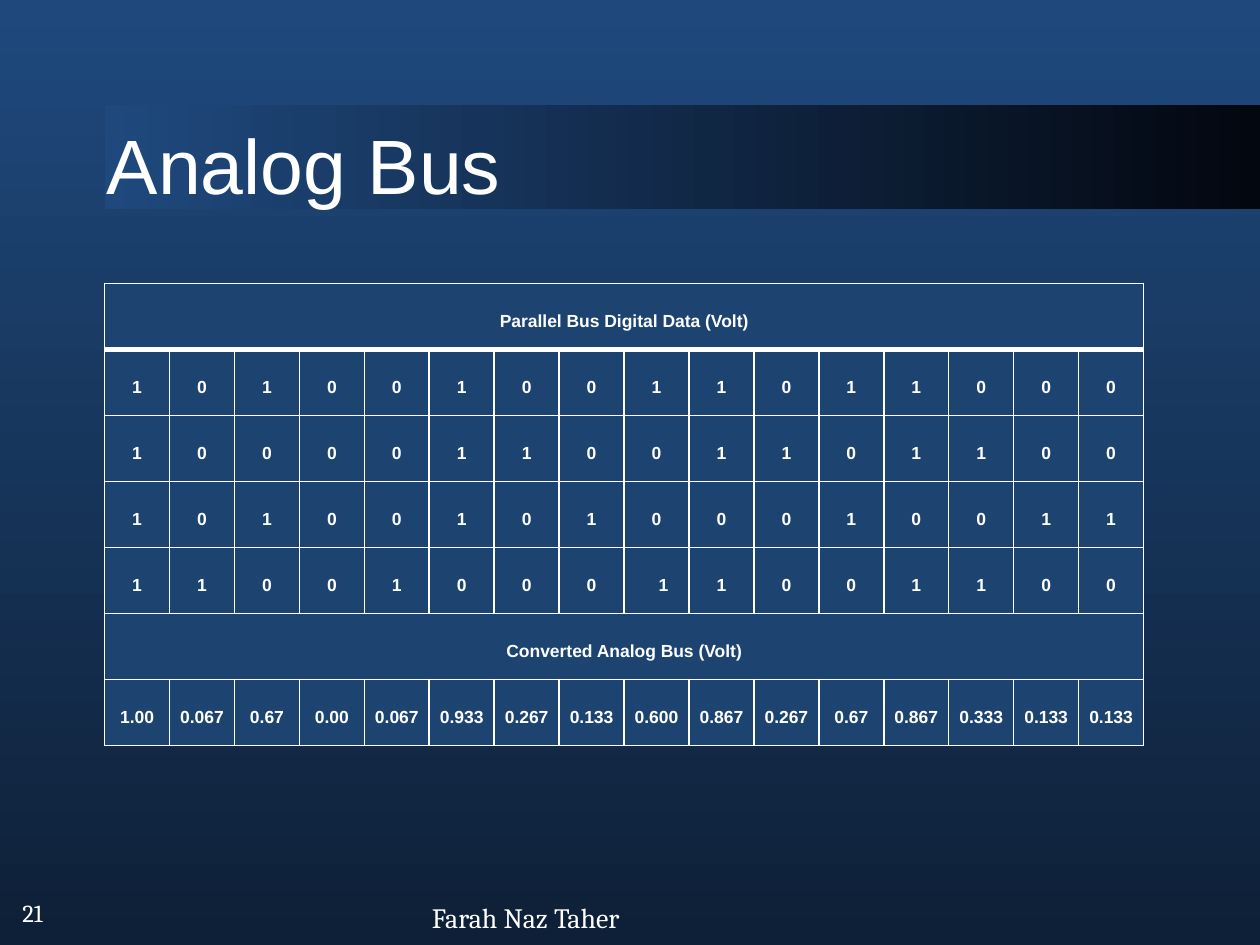
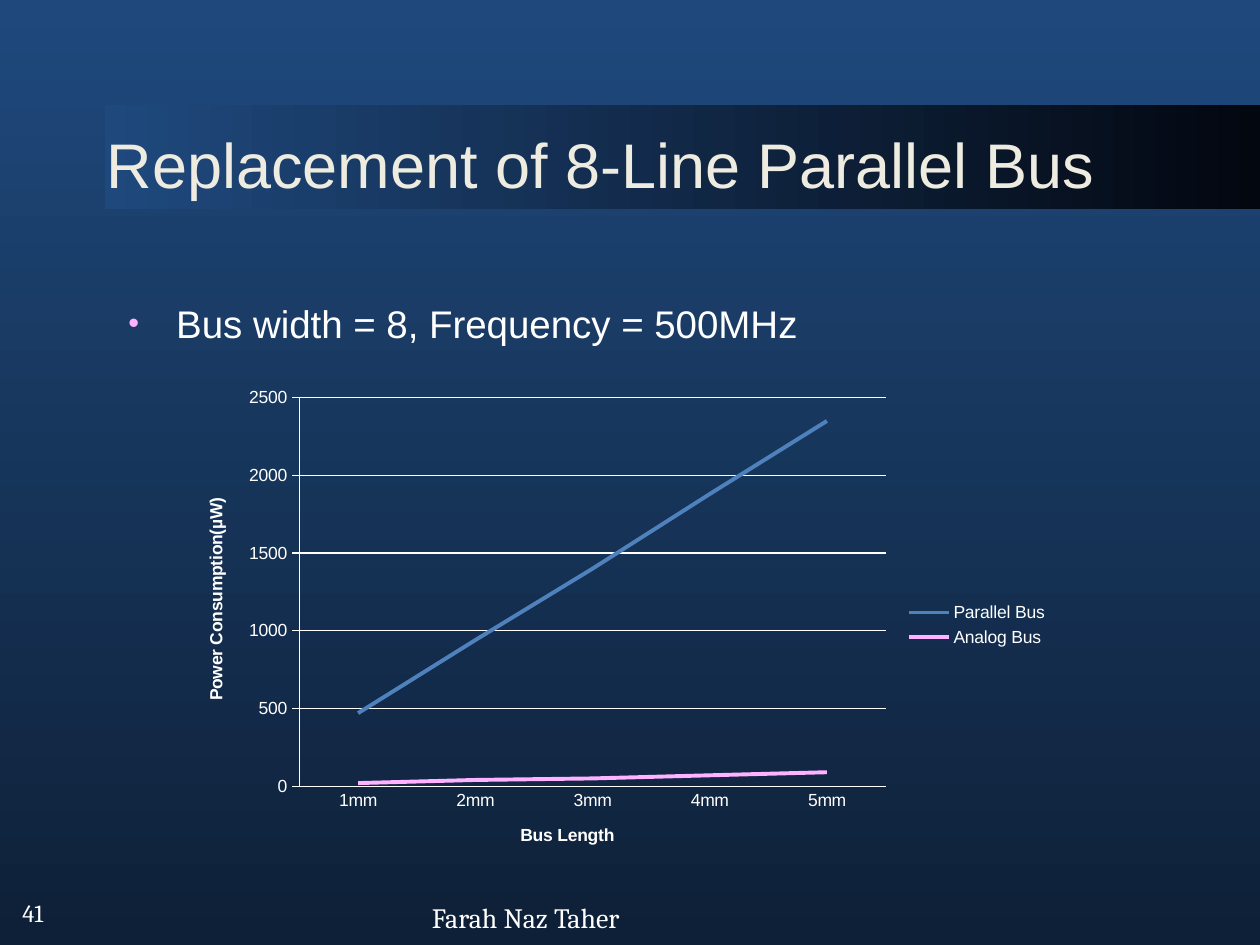
from dataclasses import dataclass

import lxml.etree
import pptx
import pptx.chart.data
import pptx.dml.color
import pptx.enum.chart
import pptx.enum.shapes
import pptx.enum.text
import pptx.oxml.ns
import pptx.util
from pptx.util import Inches

qn = pptx.oxml.ns.qn


@dataclass(frozen=True)
class Theme:
    sky: str = "1F497D"
    dusk: str = "0E2037"
    night: str = "030710"
    cell: str = "1D4371"
    white: str = "FFFFFF"
    ivory: str = "EEECE1"
    blue: str = "4F81BD"
    pink: str = "FEB2FF"
    sans: str = "Arial"
    serif: str = "Cambria"
    title_size: int = 44
    long_title_size: int = 36
    body_size: int = 22
    author_size: int = 16
    number_size: int = 14
    small_size: int = 10


def rgb(color):
    return pptx.dml.color.RGBColor.from_string(color)


def set_font(font, size, color, name, bold=False):
    font.size = pptx.util.Pt(size)
    font.color.rgb = rgb(color)
    font.name = name
    font.bold = bold


def set_gradient(fill, start, end, angle):
    fill.gradient()
    fill.gradient_angle = angle
    for stop, color in zip(fill.gradient_stops, (start, end)):
        stop.color.rgb = rgb(color)


def set_borders(cell, color, **widths):
    """Draw cell edges; widths maps L, R, T and B to points."""
    properties = cell._tc.get_or_add_tcPr()
    for side, width in widths.items():
        line = lxml.etree.SubElement(
            properties, qn(f"a:ln{side}"), w=str(pptx.util.Pt(width)))
        fill = lxml.etree.SubElement(line, qn("a:solidFill"))
        lxml.etree.SubElement(fill, qn("a:srgbClr"), val=color)


class SlideBuilder:
    AUTHOR = "Farah Naz Taher"

    def __init__(self, deck, theme):
        self.deck = deck
        self.theme = theme
        self.page = None

    def start_slide(self, title, number, title_size, title_color):
        """Add a slide with the shared background, band, title and footer."""
        theme = self.theme
        self.page = self.deck.slides.add_slide(self.deck.slide_layouts[6])
        set_gradient(self.page.background.fill, theme.sky, theme.dusk, 270)
        self.band()
        self.text(title, (0.75, 0.67, 8.5, 1.25), title_size, title_color,
                  theme.sans, pptx.enum.text.MSO_ANCHOR.MIDDLE)
        self.text(str(number), (0.08, 7.08, 0.5, 0.34), theme.number_size,
                  theme.white, theme.serif)
        self.text(self.AUTHOR, (3.33, 7.1, 1.83, 0.37), theme.author_size,
                  theme.white, theme.serif)

    def band(self):
        band = self.page.shapes.add_shape(
            pptx.enum.shapes.MSO_SHAPE.RECTANGLE,
            Inches(0.83), Inches(0.83), Inches(9.17), Inches(0.83))
        band.shadow.inherit = False
        band.line.fill.background()
        set_gradient(band.fill, self.theme.sky, self.theme.night, 0)

    def text(self, words, place, size, color, font_name,
             anchor=pptx.enum.text.MSO_ANCHOR.TOP, bullet_color=None):
        box = self.page.shapes.add_textbox(*map(Inches, place))
        frame = box.text_frame
        frame.word_wrap = True
        frame.vertical_anchor = anchor
        para = frame.paragraphs[0]
        para.text = words
        if bullet_color:
            self.bullet(para, bullet_color)
        set_font(para.font, size, color, font_name)

    def bullet(self, para, color):
        properties = para._p.get_or_add_pPr()
        indent = Inches(0.38)
        properties.set("marL", str(indent))
        properties.set("indent", str(-indent))
        bullet_color = lxml.etree.SubElement(properties, qn("a:buClr"))
        lxml.etree.SubElement(bullet_color, qn("a:srgbClr"), val=color)
        lxml.etree.SubElement(properties, qn("a:buSzPct"), val="80000")
        lxml.etree.SubElement(properties, qn("a:buFont"), typeface=self.theme.sans)
        lxml.etree.SubElement(properties, qn("a:buChar"), char="•")

    def table(self, rows, place):
        """Add a grid in which a row of one entry spans the full width."""
        column_count = max(map(len, rows))
        table = self.page.shapes.add_table(
            len(rows), column_count, *map(Inches, place)).table
        table.first_row = table.horz_banding = False
        for row_index, row in enumerate(rows):
            if len(row) == 1:
                table.cell(row_index, 0).merge(
                    table.cell(row_index, column_count - 1))
            for column_index in range(column_count):
                cell = table.cell(row_index, column_index)
                set_borders(cell, self.theme.white, L=1, R=1,
                            T=3 if row_index == 1 else 1,
                            B=3 if row_index == 0 else 1)
                cell.fill.solid()
                cell.fill.fore_color.rgb = rgb(self.theme.cell)
                if column_index < len(row):
                    self.cell_text(cell, row[column_index])
        return table

    def cell_text(self, cell, words):
        cell.margin_left = cell.margin_right = Inches(0.07)
        cell.margin_top = cell.margin_bottom = 0
        cell.vertical_anchor = pptx.enum.text.MSO_ANCHOR.MIDDLE
        para = cell.text_frame.paragraphs[0]
        para.text = words
        para.alignment = pptx.enum.text.PP_ALIGN.CENTER
        para.line_spacing = 1.5
        set_font(para.font, self.theme.small_size, self.theme.white,
                 self.theme.sans, bold=True)

    def line_chart(self, categories, series, axis_titles, place):
        """Add a line chart; series maps each name to its values and color."""
        theme = self.theme
        data = pptx.chart.data.CategoryChartData()
        data.categories = categories
        for name, (values, _) in series.items():
            data.add_series(name, values)
        chart = self.page.shapes.add_chart(
            pptx.enum.chart.XL_CHART_TYPE.LINE, *map(Inches, place), data).chart
        set_font(chart.font, theme.small_size, theme.white, theme.sans)
        chart.has_title = False
        chart.has_legend = True
        chart.legend.position = pptx.enum.chart.XL_LEGEND_POSITION.RIGHT
        chart.legend.include_in_layout = False

        plot = chart.plots[0]
        plot.vary_by_categories = False
        for line, (_, color) in zip(plot.series, series.values()):
            line.smooth = False
            line.marker.style = pptx.enum.chart.XL_MARKER_STYLE.NONE
            line.format.line.width = pptx.util.Pt(2.25)
            line.format.line.color.rgb = rgb(color)

        marks = pptx.enum.chart.XL_TICK_MARK
        axes = (chart.category_axis, chart.value_axis)
        for axis, title, mark in zip(axes, axis_titles, (marks.NONE, marks.OUTSIDE)):
            axis.major_tick_mark = mark
            axis.minor_tick_mark = marks.NONE
            axis.format.line.color.rgb = rgb(theme.white)
            para = axis.axis_title.text_frame.paragraphs[0]
            para.text = title
            set_font(para.font, theme.small_size, theme.white, theme.sans, bold=True)
        chart.value_axis.maximum_scale = 2500
        chart.value_axis.minimum_scale = 0
        chart.value_axis.major_unit = 500
        chart.value_axis.has_major_gridlines = True
        chart.value_axis.major_gridlines.format.line.color.rgb = rgb(theme.white)


def add_bus_table_slide(builder):
    theme = builder.theme
    builder.start_slide("Analog Bus", 21, theme.title_size, theme.white)
    digital_lines = ("1010010011011000", "1000011001101100",
                     "1010010100010011", "1100100011001100")
    analog_volts = ("1.00 0.067 0.67 0.00 0.067 0.933 0.267 0.133 "
                    "0.600 0.867 0.267 0.67 0.867 0.333 0.133 0.133")
    rows = [["Parallel Bus Digital Data (Volt)"],
            *map(list, digital_lines),
            ["Converted Analog Bus (Volt)"],
            analog_volts.split()]
    table = builder.table(rows, (0.83, 2.25, 8.25, 3.67))
    table.cell(4, 8).margin_left = Inches(0.18)


def add_power_chart_slide(builder):
    theme = builder.theme
    builder.start_slide("Replacement of 8-Line Parallel Bus", 41,
                        theme.long_title_size, theme.ivory)
    builder.text("Bus width = 8, Frequency = 500MHz", (0.92, 2.33, 8.25, 4.08),
                 theme.body_size, theme.white, theme.sans,
                 bullet_color=theme.pink)
    builder.line_chart(
        [f"{length}mm" for length in range(1, 6)],
        {"Parallel Bus": ((470, 940, 1400, 1880, 2350), theme.blue),
         "Analog Bus": ((20, 40, 50, 70, 90), theme.pink)},
        ("Bus Length", "Power Consumption(µW)"), (1.42, 3, 7, 3.92))


def main():
    deck = pptx.Presentation()
    deck.slide_width = Inches(10)
    deck.slide_height = Inches(7.5)
    builder = SlideBuilder(deck, Theme())
    add_bus_table_slide(builder)
    add_power_chart_slide(builder)
    deck.save("out.pptx")


if __name__ == "__main__":
    main()
